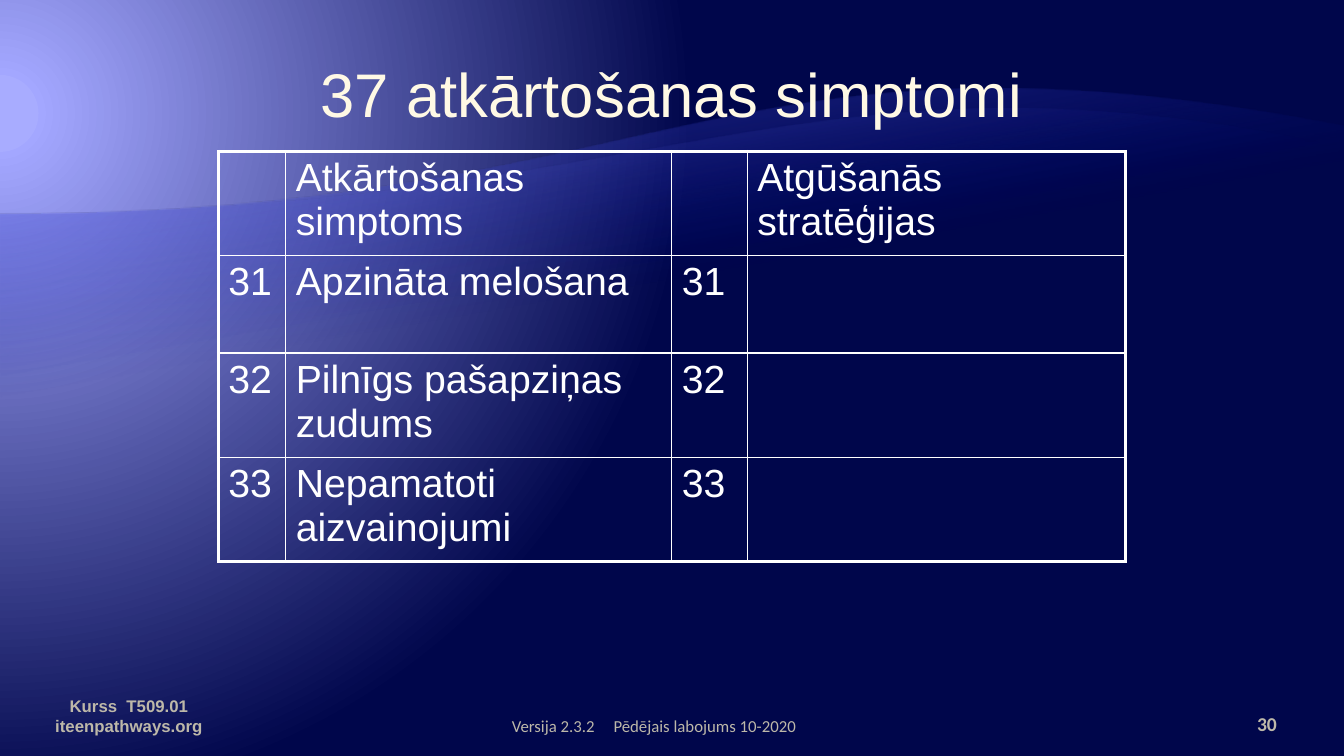
from lxml import etree
from pptx import Presentation
from pptx import util as u
from pptx.dml.color import RGBColor
from pptx.enum import text
from pptx.oxml import ns

WIDTH, HEIGHT = 33.87, 19.05
WHITE, CREAM, GREY = "FFFFFF", "FFF9E5", "BDB8A9"

HEADERS = ["", "Atkārtošanas simptoms", "", "Atgūšanās stratēģijas"]
SYMPTOMS = {
    "31": "Apzināta melošana",
    "32": "Pilnīgs pašapziņas zudums",
    "33": "Nepamatoti aizvainojumi",
}
COLUMN_WIDTHS = [1.7, 9.73, 1.9, 9.53]
ROW_HEIGHT = 2.46


def color(value):
    return RGBColor.from_string(value)


def add_child(parent, tag, **attributes):
    child = etree.SubElement(parent, ns.qn(tag))
    for name, value in attributes.items():
        child.set(name, str(value))
    return child


def replace_fill(solid_fill, stops):
    """Swap a solid fill for a gradient of (percent, colour, opacity) stops."""
    gradient = etree.Element(ns.qn("a:gradFill"), rotWithShape="1")
    stop_list = add_child(gradient, "a:gsLst")
    for position, value, opacity in stops:
        stop = add_child(stop_list, "a:gs", pos=position * 1000)
        stop_color = add_child(stop, "a:srgbClr", val=value)
        if opacity < 100:
            add_child(stop_color, "a:alpha", val=opacity * 1000)
    solid_fill.getparent().replace(solid_fill, gradient)
    return gradient


def format_text(text_frame, size, value, font="Arial", bold=False, align=None):
    for paragraph in text_frame.paragraphs:
        paragraph.alignment = align
        for run in paragraph.runs:
            run.font.size = u.Pt(size)
            run.font.name = font
            run.font.bold = bold
            run.font.color.rgb = color(value)


def add_label(slide, box, words, size, value, anchor=text.MSO_ANCHOR.BOTTOM,
              margins=(0.25, 0.25), **style):
    text_frame = slide.shapes.add_textbox(*map(u.Cm, box)).text_frame
    text_frame.word_wrap = True
    text_frame.vertical_anchor = anchor
    text_frame.margin_left, text_frame.margin_right = map(u.Cm, margins)
    text_frame.text = words
    format_text(text_frame, size, value, **style)


def paint_background(slide):
    slide.background.fill.solid()
    solid_fill = slide.element.find(".//" + ns.qn("a:solidFill"))
    gradient = replace_fill(solid_fill, [(5, "A8ACFF", 100), (5, "A3A7FF", 100),
                                         (90, "00064B", 100)])
    circle = add_child(gradient, "a:path", **{"path": "circle"})
    add_child(circle, "a:fillToRect", l=20000, t=30000, r=135000, b=100000)


def add_wave(slide, controls, bottom, crest, opacity, steps=48):
    """Fill the area below a cubic curve given by four control points."""
    points = []
    for step in range(steps + 1):
        t = step / steps
        weights = [(1 - t) ** 3, 3 * t * (1 - t) ** 2, 3 * t * t * (1 - t), t ** 3]
        points.append(tuple(u.Cm(sum(w * point[axis] for w, point in zip(weights, controls)))
                            for axis in (0, 1)))
    points += [(u.Cm(WIDTH), u.Cm(bottom)), (0, u.Cm(bottom))]
    builder = slide.shapes.build_freeform(*points[0])
    builder.add_line_segments(points[1:], close=True)
    wave = builder.convert_to_shape()
    wave.shadow.inherit = False
    wave.line.fill.background()
    wave.fill.solid()
    solid_fill = wave.element.spPr.find(ns.qn("a:solidFill"))
    gradient = replace_fill(solid_fill, [(65, "000D9E", 0), (100, crest, opacity)])
    add_child(gradient, "a:lin", ang=260 * 60000, scaled=0)


def set_borders(cell, widths):
    """Draw white left, right, top and bottom borders of the given point widths."""
    properties = cell._tc.get_or_add_tcPr()
    for index, (side, width) in enumerate(zip("LRTB", widths)):
        line = add_child(properties, f"a:ln{side}", w=u.Pt(width))
        add_child(add_child(line, "a:solidFill"), "a:srgbClr", val=WHITE)
        properties.insert(index, line)


def add_symptom_table(slide, left, top):
    rows = [HEADERS] + [[number, symptom, number, ""] for number, symptom in SYMPTOMS.items()]
    last_row, last_column = len(rows) - 1, len(COLUMN_WIDTHS) - 1
    table = slide.shapes.add_table(
        len(rows), len(COLUMN_WIDTHS), u.Cm(left), u.Cm(top),
        u.Cm(sum(COLUMN_WIDTHS)), u.Cm(ROW_HEIGHT * len(rows))).table
    table.first_row = table.horz_banding = False
    for column, width in zip(table.columns, COLUMN_WIDTHS):
        column.width = u.Cm(width)
    for r, row in enumerate(rows):
        table.rows[r].height = u.Cm(ROW_HEIGHT)
        for c, words in enumerate(row):
            cell = table.cell(r, c)
            cell.text = words
            cell.fill.background()
            format_text(cell.text_frame, 28, WHITE)
            edges = (c == 0, c == last_column, r == 0, r == last_row)
            set_borders(cell, [2.25 if outer else 1 for outer in edges])


def add_footer(slide, top, height):
    align = text.PP_ALIGN
    add_label(slide, (0, top, 6.5, height), "Kurss  T509.01\niteenpathways.org",
              12, GREY, bold=True, align=align.CENTER)
    add_label(slide, (12.9, top, 10.16, height), "Versija 2.3.2     Pēdējais labojums 10-2020",
              12, GREY, font="Calibri", margins=(0, 0.25))
    add_label(slide, (30.2, top, 1.98, height), "30", 14, GREY, font="Calibri",
              bold=True, align=align.RIGHT, margins=(0.25, 0))


def main():
    presentation = Presentation()
    presentation.slide_width, presentation.slide_height = u.Cm(WIDTH), u.Cm(HEIGHT)
    slide = presentation.slides.add_slide(presentation.slide_layouts[6])
    paint_background(slide)
    add_wave(slide, [(0, 5.4), (16.93, 5.4), (18.1, 0.12), (WIDTH, 3.18)], 18.62, "797FFF", 55)
    add_wave(slide, [(0, 5.4), (16.93, 5.4), (20.25, 0.78), (WIDTH, 3.73)], 16.18, "A3A7FF", 30)
    add_label(slide, (5.5, 0.76, 22.86, 3.18), "37 atkārtošanas simptomi", 44, CREAM,
              anchor=text.MSO_ANCHOR.MIDDLE, align=text.PP_ALIGN.CENTER)
    add_symptom_table(slide, 5.5, 3.81)
    add_footer(slide, 17.65, 1.02)
    presentation.save("out.pptx")


if __name__ == "__main__":
    main()
